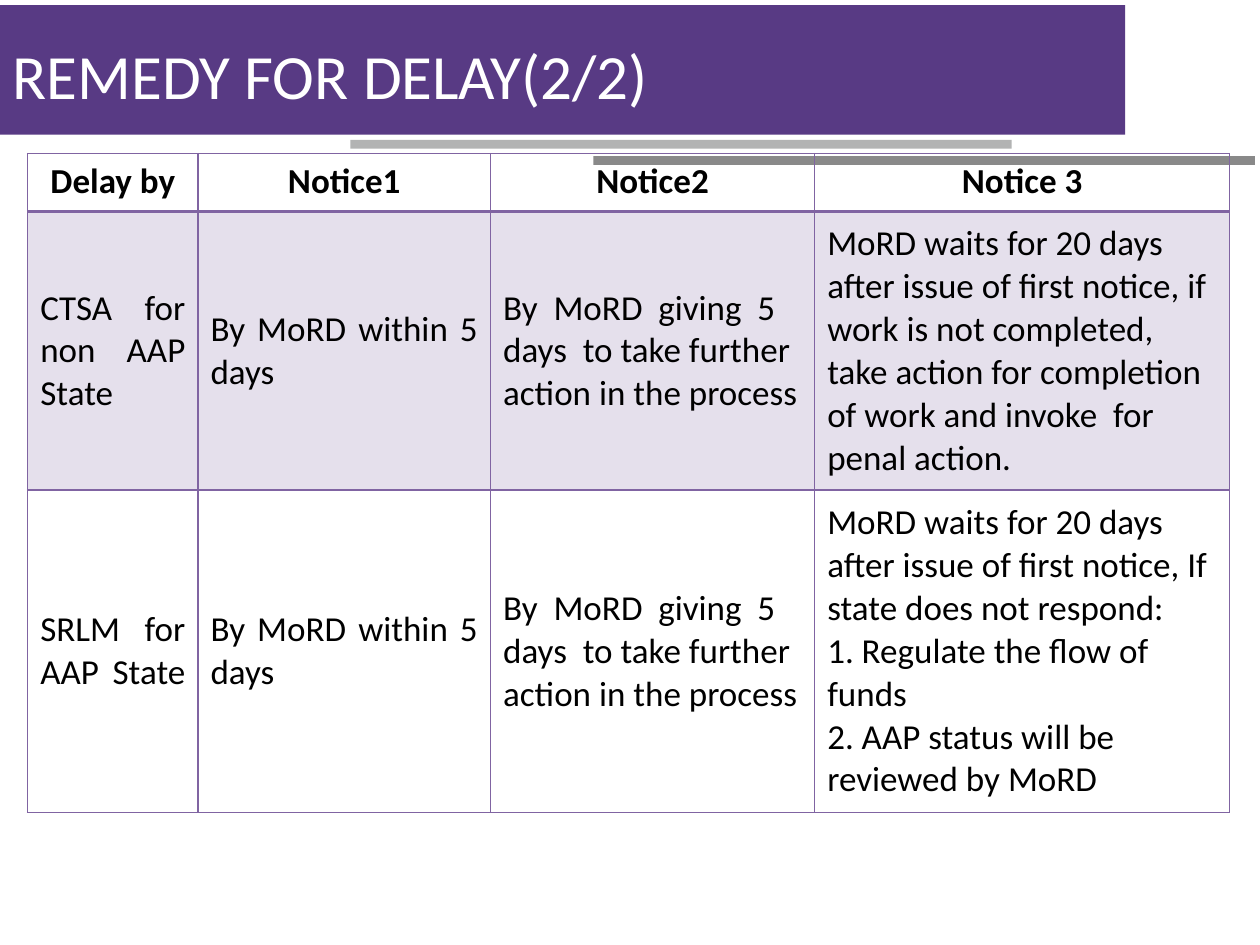
from dataclasses import dataclass

from lxml.etree import SubElement
from pptx import Presentation
from pptx.dml.color import RGBColor
from pptx.enum.shapes import MSO_SHAPE
from pptx.enum.text import MSO_ANCHOR, PP_ALIGN
from pptx.oxml import parse_xml
from pptx.oxml.ns import nsdecls, qn
from pptx.util import Inches, Pt


@dataclass(frozen=True)
class Theme:
    font: str = "Calibri"
    title_size: int = 36
    table_size: int = 20
    banner: str = "583A84"
    dark_bar: str = "898989"
    light_bar: str = "B2B3B3"
    title: str = "FFFFFF"
    text: str = "000000"
    accent: str = "8064A2"
    band_alpha: int = 20


THEME = Theme()
TITLE = "REMEDY FOR DELAY(2/2)"
COLUMNS = [1.35, 2.32, 2.57, 3.29]
ROWS = [0.46, 2.21, 2.56]
HEADINGS = ["Delay by", "Notice1", "Notice2", "Notice 3"]
NOTICE_1 = "By MoRD within 5 days "
NOTICE_2 = "By  MoRD  giving  5 days  to take further action in the process"
# Each cell is a list of paragraphs
REMEDIES = [
    [["CTSA  for non AAP State"], [NOTICE_1], [NOTICE_2],
     ["MoRD waits for 20 days after issue of first notice, if work is not "
      "completed, take action for completion of work and invoke  for penal action."]],
    [["SRLM for AAP State "], [NOTICE_1], [NOTICE_2],
     ["MoRD waits for 20 days after issue of first notice, If state does not respond:",
      "1. Regulate the flow of funds",
      "2. AAP status will be reviewed by MoRD"]],
]


def add_run(paragraph, text, size, color, bold=False):
    run = paragraph.add_run()
    run.text = text
    run.font.name = THEME.font
    run.font.size = Pt(size)
    run.font.bold = bold
    run.font.color.rgb = RGBColor.from_string(color)


def add_bar(slide, box, color):
    bar = slide.shapes.add_shape(MSO_SHAPE.RECTANGLE, *map(Inches, box))
    bar.shadow.inherit = False
    bar.fill.solid()
    bar.fill.fore_color.rgb = RGBColor.from_string(color)
    bar.line.fill.background()


def add_header(slide, box):
    """Banner with two offset bars below it and the title on top."""
    left, top, width, height = box
    bar_width, bar_height = 0.525 * width, 0.07
    add_bar(slide, (left, top + 0.04, 0.893 * width, 1.03), THEME.banner)
    add_bar(slide, (left + 0.471 * width, top + 1.24, bar_width, bar_height), THEME.dark_bar)
    add_bar(slide, (left + 0.278 * width, top + 1.11, bar_width, bar_height), THEME.light_bar)

    title = slide.shapes.title
    title.left, title.top = Inches(left), Inches(top + 0.12)
    title.width, title.height = Inches(0.901 * width), Inches(height - 0.29)
    slide.shapes.element.append(title.element)  # bring in front of the banner
    title.text_frame.vertical_anchor = MSO_ANCHOR.MIDDLE
    paragraph = title.text_frame.paragraphs[0]
    paragraph.alignment = PP_ALIGN.LEFT
    paragraph.line_spacing = 0.9
    add_run(paragraph, TITLE, THEME.title_size, THEME.title)


def set_borders(cell, widths):
    properties = cell._tc.get_or_add_tcPr()
    for index, (side, width) in enumerate(widths.items()):
        properties.insert(index, parse_xml(
            f'<a:ln{side} {nsdecls("a")} w="{Pt(width)}"><a:solidFill>'
            f'<a:srgbClr val="{THEME.accent}"/></a:solidFill></a:ln{side}>'))


def fill_cell(cell, paragraphs, alignment, heading=False, banded=False):
    cell.vertical_anchor = MSO_ANCHOR.TOP if heading else MSO_ANCHOR.MIDDLE
    frame = cell.text_frame
    for index, text in enumerate(paragraphs):
        paragraph = frame.add_paragraph() if index else frame.paragraphs[0]
        paragraph.alignment = alignment
        add_run(paragraph, text, THEME.table_size, THEME.text, heading)
    if banded:
        cell.fill.solid()
        cell.fill.fore_color.rgb = RGBColor.from_string(THEME.accent)
        color = cell._tc.tcPr.find(".//" + qn("a:srgbClr"))
        SubElement(color, qn("a:alpha")).set("val", str(THEME.band_alpha * 1000))
    else:
        cell.fill.background()


def add_remedy_table(slide, box):
    left, top, width, height = box
    table = slide.shapes.add_table(
        len(ROWS), len(COLUMNS), *map(Inches, box)).table
    table.horz_banding = False
    table.first_row = False
    for column, share in zip(table.columns, COLUMNS):
        column.width = Inches(width * share / sum(COLUMNS))
    for row, share in zip(table.rows, ROWS):
        row.height = Inches(height * share / sum(ROWS))

    # Heading row
    for c, heading in enumerate(HEADINGS):
        fill_cell(table.cell(0, c), [heading], PP_ALIGN.CENTER, heading=True)
    # Remedy rows: the first two columns are justified
    for r, remedy in enumerate(REMEDIES, start=1):
        for c, paragraphs in enumerate(remedy):
            alignment = PP_ALIGN.JUSTIFY if c < 2 else PP_ALIGN.LEFT
            fill_cell(table.cell(r, c), paragraphs, alignment, banded=r % 2 == 1)
    # Grid lines, heavier under the headings
    for r in range(len(ROWS)):
        for c in range(len(COLUMNS)):
            set_borders(table.cell(r, c), {
                "L": 1, "R": 1, "T": 2 if r == 1 else 1, "B": 2 if r == 0 else 1})


def main():
    deck = Presentation()
    deck.slide_width, deck.slide_height = Inches(10), Inches(7.5)
    slide = deck.slides.add_slide(deck.slide_layouts[5])
    add_header(slide, (0, 0, 10, 1.31))
    add_remedy_table(slide, (0.22, 1.22, 9.54, 5.23))
    deck.save("out.pptx")


if __name__ == "__main__":
    main()
